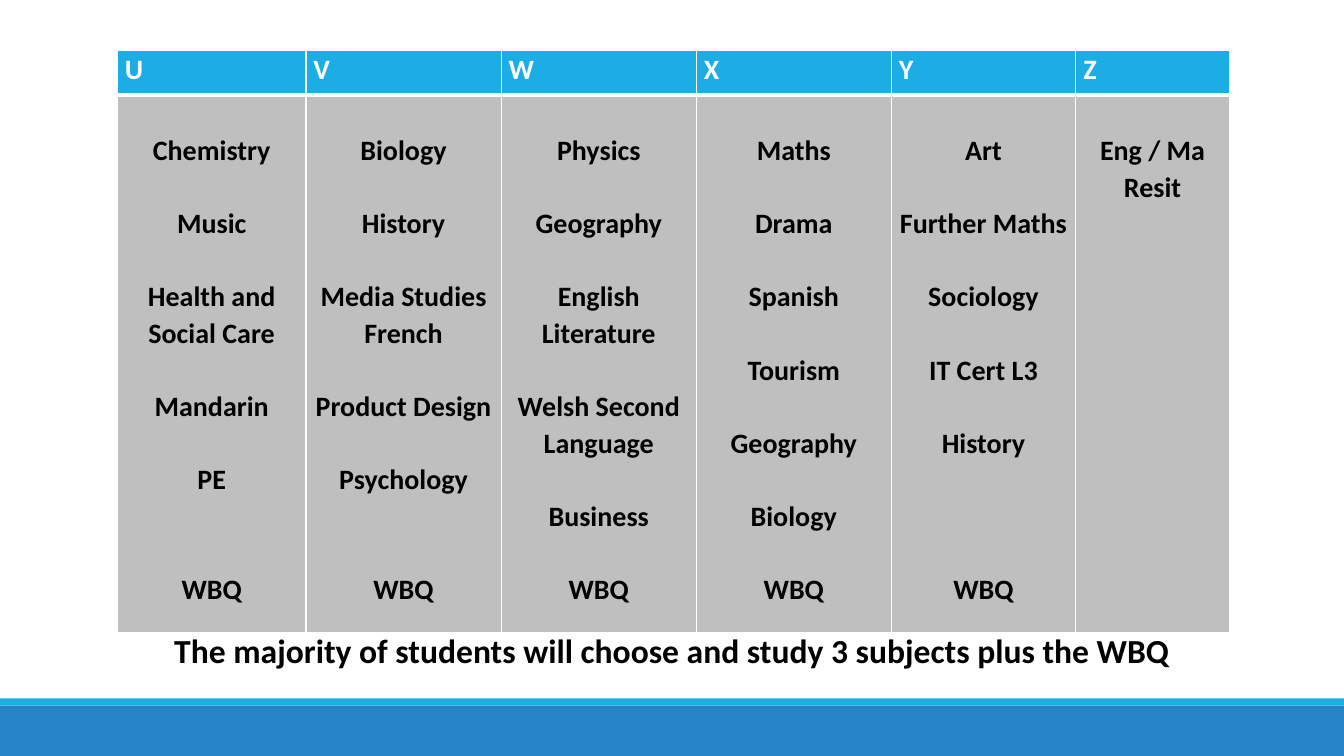
from lxml import etree
from pptx import Presentation
from pptx.dml.color import RGBColor
from pptx.enum.shapes import MSO_SHAPE
from pptx.enum.text import PP_ALIGN
from pptx.oxml.ns import qn
from pptx.util import Cm, Pt

LEFT, CENTER = PP_ALIGN.LEFT, PP_ALIGN.CENTER
RECTANGLE = MSO_SHAPE.RECTANGLE

COLORS = {"blue": "2683C6", "cyan": "1CADE4", "grey": "BFBFBF",
          "white": "FFFFFF", "black": "000000"}
FONT = "Calibri"

# Option block: column width in cm, then (subject, empty lines above it)
OPTION_BLOCKS = {
    "U": (4.75, [("Chemistry", 0), ("Music", 1), ("Health and Social Care", 1),
                 ("Mandarin", 1), ("PE", 1), ("WBQ", 2)]),
    "V": (4.92, [("Biology", 0), ("History", 1), ("Media Studies", 1), ("French", 0),
                 ("Product Design", 1), ("Psychology", 1), ("WBQ", 2)]),
    "W": (4.92, [("Physics", 0), ("Geography", 1), ("English Literature", 1),
                 ("Welsh Second Language", 1), ("Business", 1), ("WBQ", 1)]),
    "X": (4.91, [("Maths", 0), ("Drama", 1), ("Spanish", 1), ("Tourism", 1),
                 ("Geography", 1), ("Biology", 1), ("WBQ", 1)]),
    "Y": (4.65, [("Art", 0), ("Further Maths", 1), ("Sociology", 1),
                 ("IT Cert L3", 1), ("History", 1), ("WBQ", 3)]),
    "Z": (3.87, [("Eng / Ma Resit", 0)]),
}
CAPTION = "The majority of students will choose and study 3 subjects plus the WBQ"

SLIDE_WIDTH, SLIDE_HEIGHT = 33.87, 19.05
TABLE_LEFT, TABLE_TOP = 2.96, 1.27
HEADER_HEIGHT, SUBJECTS_HEIGHT = 1.12, 13.56
CELL_INSET = 0.19
LINE_SPACING = 1.07
LINE_PITCH = 26.1  # points taken by one line of 20 pt text
BARS = [("blue", 17.78, 1.27), ("cyan", 17.6, 0.18)]


def rgb(name):
    return RGBColor.from_string(COLORS[name])


def write(frame, lines, size=20, color="black", align=CENTER, spacing=1.0):
    """Fill a text frame with (text, empty lines above) pairs."""
    for index, (text, gap) in enumerate(lines):
        paragraph = frame.paragraphs[0] if index == 0 else frame.add_paragraph()
        paragraph.alignment = align
        paragraph.line_spacing = spacing
        paragraph.space_before = Pt(gap * LINE_PITCH)
        run = paragraph.add_run()
        run.text = text
        run.font.name = FONT
        run.font.size = Pt(size)
        run.font.bold = True
        run.font.color.rgb = rgb(color)


def format_cell(cell, fill, top_inset, top_border, bottom_border):
    cell.margin_left = cell.margin_right = Cm(CELL_INSET)
    cell.margin_top, cell.margin_bottom = top_inset, 0
    properties = cell._tc.get_or_add_tcPr()
    borders = {"a:lnL": 1, "a:lnR": 1, "a:lnT": top_border, "a:lnB": bottom_border}
    for side, width in borders.items():
        line = etree.SubElement(properties, qn(side), w=str(Pt(width)))
        solid = etree.SubElement(line, qn("a:solidFill"))
        etree.SubElement(solid, qn("a:srgbClr"), val=COLORS["white"])
    cell.fill.solid()
    cell.fill.fore_color.rgb = rgb(fill)


def add_bars(slide):
    for color, top, height in BARS:
        bar = slide.shapes.add_shape(RECTANGLE, 0, Cm(top), Cm(SLIDE_WIDTH), Cm(height))
        bar.shadow.inherit = False
        bar.fill.solid()
        bar.fill.fore_color.rgb = rgb(color)
        bar.line.fill.background()


def add_caption(slide):
    caption = slide.shapes.add_textbox(Cm(1.49), Cm(15.75), Cm(30.89), Cm(1.27))
    caption.text_frame.word_wrap = True
    write(caption.text_frame, [(CAPTION, 0)], size=24)


def add_options_table(slide):
    total_width = sum(width for width, _ in OPTION_BLOCKS.values())
    table = slide.shapes.add_table(
        2, len(OPTION_BLOCKS), Cm(TABLE_LEFT), Cm(TABLE_TOP),
        Cm(total_width), Cm(HEADER_HEIGHT + SUBJECTS_HEIGHT)).table
    table.horz_banding = False
    table.rows[0].height = Cm(HEADER_HEIGHT)
    table.rows[1].height = Cm(SUBJECTS_HEIGHT)
    for column, (block, (width, subjects)) in enumerate(OPTION_BLOCKS.items()):
        table.columns[column].width = Cm(width)
        header, body = table.cell(0, column), table.cell(1, column)
        format_cell(header, "cyan", 0, 1, 3)
        write(header.text_frame, [(block, 0)], color="white", align=LEFT,
              spacing=LINE_SPACING)
        format_cell(body, "grey", Pt(LINE_PITCH), 3, 1)
        write(body.text_frame, subjects, spacing=LINE_SPACING)


def main():
    presentation = Presentation()
    presentation.slide_width = Cm(SLIDE_WIDTH)
    presentation.slide_height = Cm(SLIDE_HEIGHT)
    slide = presentation.slides.add_slide(presentation.slide_layouts[6])
    add_bars(slide)
    add_caption(slide)
    add_options_table(slide)
    presentation.save("out.pptx")


if __name__ == "__main__":
    main()
